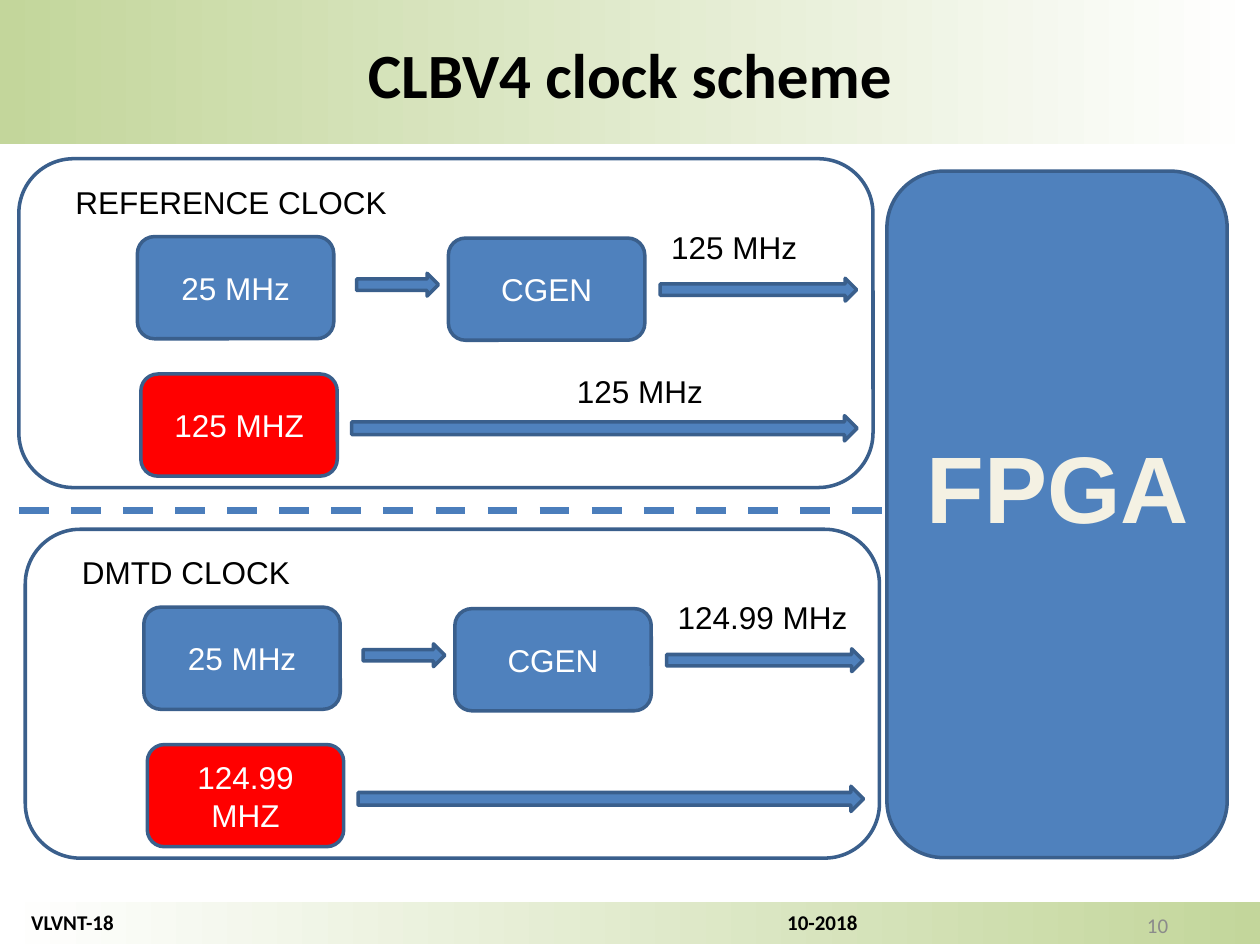
import pptx
import pptx.util
import pptx.dml.color
import pptx.enum.dml
import pptx.enum.shapes
import pptx.enum.text
import pptx.oxml
import pptx.oxml.ns

Cm = pptx.util.Cm
Pt = pptx.util.Pt
Shape = pptx.enum.shapes.MSO_SHAPE
Align = pptx.enum.text.PP_ALIGN
Anchor = pptx.enum.text.MSO_ANCHOR

COLORS = {
    "green": "C3D69B", "white": "FFFFFF", "black": "000000", "gray": "8B8B8B",
    "blue": "4F81BD", "border": "3A5F8C", "red": "FF0000", "divider": "4B7EBC",
    "cream": "F4F1E3", "outline": "054697",
}

TITLE = "CLBV4 clock scheme"
FOOTER = "VLVNT-18\t10-2018"
PAGE = "10"

BANDS = [
    ((0, 18.19, 25.4, 0.84), 180),
    ((0, 0, 25.4, 2.77), 0),
    ((0, 2.77, 25.4, 0.13), 0),
]
TITLE_BOX = (0, 0.58, 25.4, 1.78)
PAGE_BOX = (17.88, 18.14, 5.92, 1.02)
FOOTER_BOX = (0.38, 18.21, 24.71, 0.76)
FPGA_BOX = (17.88, 3.45, 6.86, 13.84)
FPGA_LABEL = (18.39, 8.53, 5.87, 2.57)
DIVIDER = (0.38, 10.29, 17.88, 10.29)

PANEL_SIZE = (17.22, 6.63)
BLOCK_SIZE = (3.96, 2.06)
PANELS = [
    {"origin": (0.38, 3.2), "caption": ("REFERENCE CLOCK", 6.86),
     "blocks": ("25 MHz", "CGEN", "125 MHZ"), "labels": ("125 MHz", "125 MHz")},
    {"origin": (0.51, 10.67), "caption": ("DMTD CLOCK", 4.75),
     "blocks": ("25 MHz", "CGEN", "124.99 MHZ"), "labels": ("124.99 MHz",)},
]
CAPTION_OFFSET = (0.89, 0.36)
BLOCKS = [((2.39, 1.57), "blue"), ((8.66, 1.6), "blue"), ((2.46, 4.34), "red")]
ARROWS = [(12.93, 2.41, 3.96, 0.46), (6.81, 2.31, 1.65, 0.46), (6.71, 5.18, 10.19, 0.51)]
LABELS = [(12.9, 1.27, 3.99, 1.02), (11, 4.17, 4.04, 1.02)]


def rgb(name):
    return pptx.dml.color.RGBColor.from_string(COLORS[name])


def write(shape, text, size, color, font="Arial", bold=False,
          align=Align.LEFT, anchor=Anchor.TOP, wrap=True):
    frame = shape.text_frame
    frame.text = text
    frame.word_wrap = wrap
    frame.vertical_anchor = anchor
    paragraph = frame.paragraphs[0]
    paragraph.alignment = align
    for run in paragraph.runs:
        run.font.size = Pt(size)
        run.font.name = font
        run.font.bold = bold
        run.font.color.rgb = rgb(color)
    return paragraph


def add_text(slide, box, text, size, color, **style):
    shape = slide.shapes.add_textbox(*map(Cm, box))
    return write(shape, text, size, color, **style)


def fill_gradient(shape, angle):
    shape.fill.gradient()
    shape.fill.gradient_angle = angle
    for stop, color in zip(shape.fill.gradient_stops, ("green", "white")):
        stop.color.rgb = rgb(color)


def add_band(slide, box, angle):
    band = slide.shapes.add_shape(Shape.RECTANGLE, *map(Cm, box))
    band.shadow.inherit = False
    band.line.fill.background()
    fill_gradient(band, angle)


def add_bordered(slide, kind, box, fill=None):
    shape = slide.shapes.add_shape(kind, *map(Cm, box))
    shape.shadow.inherit = False
    shape.line.color.rgb = rgb("border")
    shape.line.width = Pt(2)
    if fill:
        shape.fill.solid()
        shape.fill.fore_color.rgb = rgb(fill)
    else:
        shape.fill.background()
    return shape


def add_panel(slide, panel):
    left, top = panel["origin"]

    def place(x, y, width, height):
        return left + x, top + y, width, height

    add_bordered(slide, Shape.ROUNDED_RECTANGLE, place(0, 0, *PANEL_SIZE))
    caption, width = panel["caption"]
    add_text(slide, place(*CAPTION_OFFSET, width, 1.02), caption, 18, "black", wrap=False)
    for text, (offset, color) in zip(panel["blocks"], BLOCKS):
        block = add_bordered(slide, Shape.ROUNDED_RECTANGLE, place(*offset, *BLOCK_SIZE), color)
        write(block, text, 18, "white", align=Align.CENTER, anchor=Anchor.MIDDLE)
    for arrow in ARROWS:
        add_bordered(slide, Shape.RIGHT_ARROW, place(*arrow), "blue")
    for text, box in zip(panel["labels"], LABELS):
        add_text(slide, place(*box), text, 18, "black")


def add_title(slide):
    title = slide.shapes.title
    title.left, title.top, title.width, title.height = map(Cm, TITLE_BOX)
    fill_gradient(title, 0)
    write(title, TITLE, 36, "black", font="Calibri", bold=True, align=Align.CENTER)
    slide.shapes._spTree.append(title._element)


def add_footer(slide):
    add_text(slide, PAGE_BOX, PAGE, 12, "gray", font="Calibri",
             align=Align.RIGHT, anchor=Anchor.MIDDLE)
    paragraph = add_text(slide, FOOTER_BOX, FOOTER, 12, "black", font="Calibri", bold=True)
    tabs = pptx.oxml.parse_xml(
        f'<a:tabLst {pptx.oxml.ns.nsdecls("a")}><a:tab pos="{Cm(15.24)}" algn="l"/></a:tabLst>')
    paragraph._p.get_or_add_pPr().append(tabs)


def add_fpga(slide):
    add_bordered(slide, Shape.ROUNDED_RECTANGLE, FPGA_BOX, "blue")
    paragraph = add_text(slide, FPGA_LABEL, "FPGA", 54, "cream", bold=True,
                         align=Align.CENTER, wrap=False)
    outline = pptx.oxml.parse_xml(
        f'<a:ln {pptx.oxml.ns.nsdecls("a")} w="{Pt(1)}"><a:solidFill>'
        f'<a:srgbClr val="{COLORS["outline"]}"/></a:solidFill></a:ln>')
    paragraph.runs[0].font._element.insert(0, outline)


def add_divider(slide):
    divider = slide.shapes.add_connector(
        pptx.enum.shapes.MSO_CONNECTOR.STRAIGHT, *map(Cm, DIVIDER))
    divider.line.color.rgb = rgb("divider")
    divider.line.width = Pt(4.25)
    divider.line.dash_style = pptx.enum.dml.MSO_LINE.DASH
    divider._element.spPr.append(
        pptx.oxml.parse_xml(f'<a:effectLst {pptx.oxml.ns.nsdecls("a")}/>'))


def main():
    presentation = pptx.Presentation()
    presentation.slide_width, presentation.slide_height = Cm(25.4), Cm(19.05)
    slide = presentation.slides.add_slide(presentation.slide_layouts[5])
    for box, angle in BANDS:
        add_band(slide, box, angle)
    add_title(slide)
    add_footer(slide)
    add_fpga(slide)
    add_divider(slide)
    for panel in PANELS:
        add_panel(slide, panel)
    presentation.save("out.pptx")


if __name__ == "__main__":
    main()
